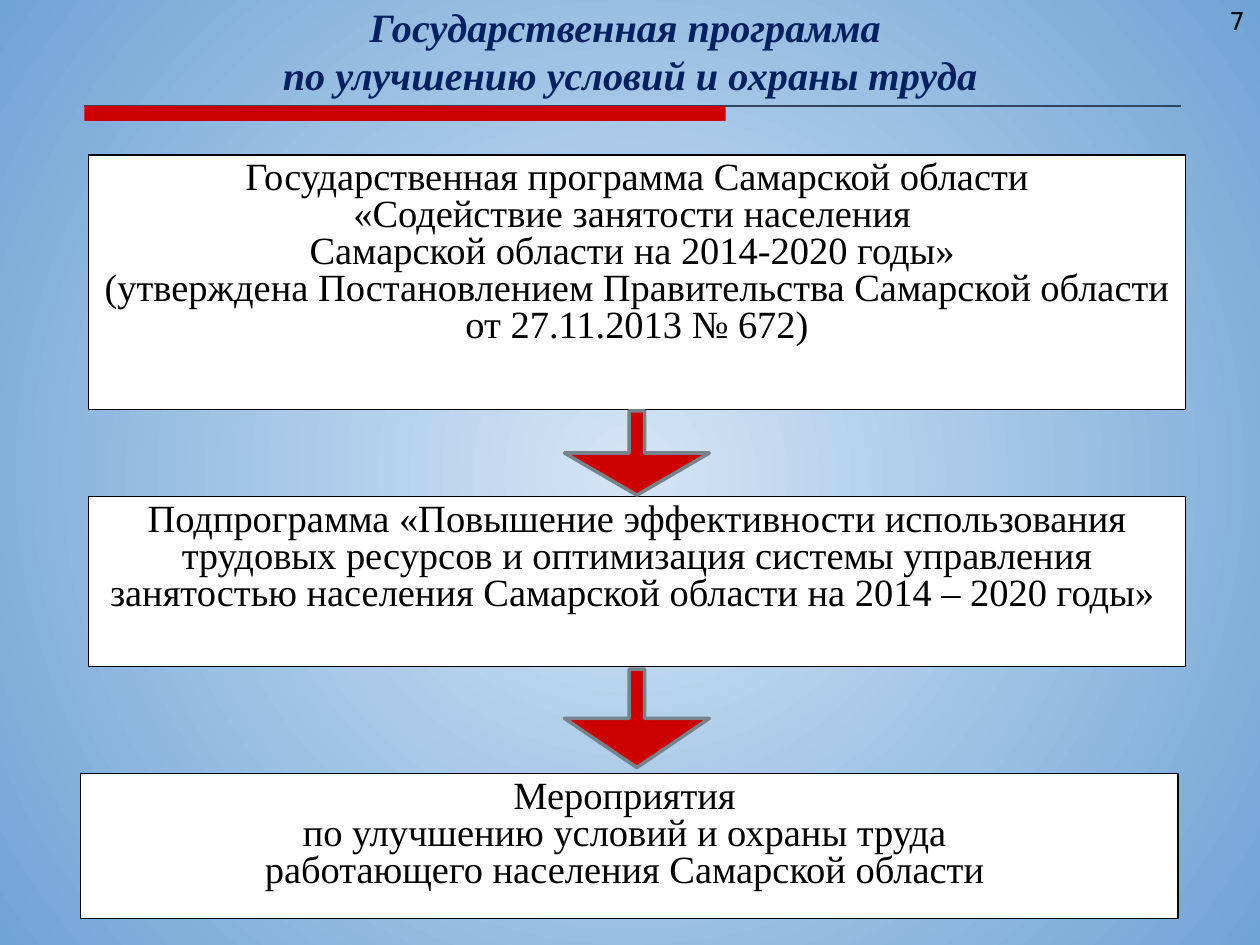
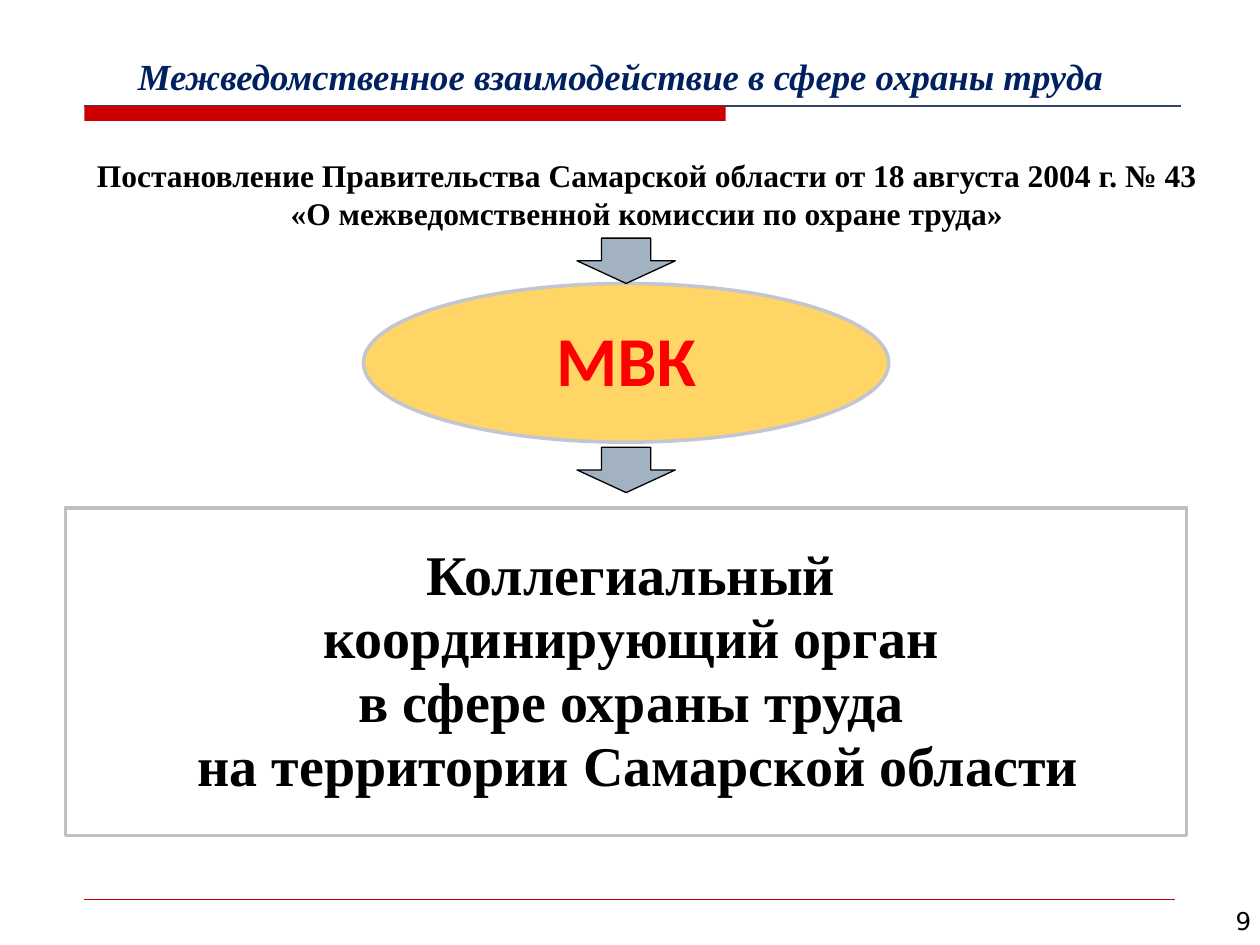
from dataclasses import dataclass
from typing import NamedTuple

from lxml.etree import SubElement
from pptx import Presentation
from pptx.dml.color import RGBColor
from pptx.enum.shapes import MSO_CONNECTOR as Connector, MSO_SHAPE as Shape
from pptx.enum.text import MSO_ANCHOR as Anchor, MSO_AUTO_SIZE as AutoSize, PP_ALIGN as Align
from pptx.oxml.ns import qn
from pptx.util import Pt


@dataclass(frozen=True)
class Theme:
    """Colours, fonts and type sizes shared by the slides."""
    red: str = "CC0000"
    navy: str = "002060"
    black: str = "000000"
    white: str = "FFFFFF"
    rule: str = "2F4560"
    glow: str = "D4E5F5"
    sky: str = "70A4D5"
    steel: str = "77828D"
    arrow: str = "A3B2C1"
    gold: str = "FFD666"
    gold_edge: str = "C3C5D1"
    grey_edge: str = "BFBFBF"
    accent: str = "FF0000"
    serif: str = "Times New Roman"
    sans: str = "Calibri"
    number_font: str = "DejaVu Sans"
    number_size: int = 14
    decree_size: int = 18
    step_size: int = 22
    body_size: int = 32
    badge_size: int = 40
    thin: float = 0.75
    thick: float = 2


THEME = Theme()


class Box(NamedTuple):
    """A rectangle in points."""
    left: float
    top: float
    width: float
    height: float

    def inner(self, dx, dy, width, height):
        """Return a box offset from this one's top left corner."""
        return Box(self.left + dx, self.top + dy, width, height)

    def centred(self, dy, width, height):
        """Return a box centred across this one."""
        return self.inner((self.width - width) / 2, dy, width, height)

    def points(self):
        """Return the four lengths as Pt."""
        return [Pt(value) for value in self]


def colour(code):
    """Turn a hex code into a colour."""
    return RGBColor.from_string(code)


def write(frame, paragraphs, size, font=THEME.serif, ink=THEME.black, bold=False,
          italic=False, align=Align.CENTER, anchor=Anchor.TOP, spacing=None):
    """Fill a text frame with paragraphs, each given as a list of lines."""
    frame.word_wrap = True
    frame.auto_size = AutoSize.NONE
    frame.vertical_anchor = anchor
    for index, lines in enumerate(paragraphs):
        para = frame.add_paragraph() if index else frame.paragraphs[0]
        for number, line in enumerate(lines):
            if number:
                para.add_line_break()
            para.add_run().text = line
        para.alignment = align
        para.line_spacing = spacing
        para.font.name = font
        para.font.size = Pt(size)
        para.font.bold = bold
        para.font.italic = italic
        para.font.color.rgb = colour(ink)


def add_figure(page, kind, box, fill, edge=None, weight=THEME.thin):
    """Add a flat preset shape."""
    figure = page.shapes.add_shape(kind, *box.points())
    figure.shadow.inherit = False
    figure.fill.solid()
    figure.fill.fore_color.rgb = colour(fill)
    if edge:
        figure.line.color.rgb = colour(edge)
        figure.line.width = Pt(weight)
    else:
        figure.line.fill.background()
    return figure


def add_arrow(page, box, shaft, fill, edge, weight):
    """Add a down arrow with the given shaft width."""
    arrow = add_figure(page, Shape.DOWN_ARROW, box, fill, edge, weight)
    arrow.adjustments[0] = shaft
    arrow.adjustments[1] = 0.5


def add_rule(page, left, top, width, ink):
    """Add a thin horizontal line."""
    rule = page.shapes.add_connector(
        Connector.STRAIGHT, Pt(left), Pt(top), Pt(left + width), Pt(top))
    rule.line.color.rgb = colour(ink)
    rule.line.width = Pt(THEME.thin)
    SubElement(rule.element.spPr, qn("a:effectLst"))


def paint_glow(page):
    """Give the page a round gradient background."""
    fill = page.background.fill
    fill.gradient()
    for stop, code in zip(fill.gradient_stops, (THEME.glow, THEME.sky)):
        stop.color.rgb = colour(code)
    gradient = page.element.find(".//" + qn("a:gradFill"))
    gradient.remove(gradient.find(qn("a:lin")))
    circle = SubElement(gradient, qn("a:path"), path="circle")
    SubElement(circle, qn("a:fillToRect"), l="50000", t="50000", r="50000", b="50000")


def draw_header(page, band, title_box, lines, size):
    """Place the title and the red band with its rule."""
    add_rule(page, band.left, band.top, band.width, THEME.rule)
    add_figure(page, Shape.RECTANGLE, band.inner(0, 0, 366.5, band.height), THEME.red)
    title = page.shapes.title
    title.left, title.top, title.width, title.height = title_box.points()
    write(title.text_frame, [lines], size, ink=THEME.navy, bold=True, italic=True,
          anchor=Anchor.BOTTOM)


def draw_number(page, box, number):
    """Write the page number."""
    label = page.shapes.add_textbox(*box.points())
    write(label.text_frame, [[number]], THEME.number_size, THEME.number_font,
          align=Align.RIGHT)


def draw_steps(page, box):
    """Draw the chain of programme steps joined by arrows."""
    steps = [
        (0, 0, 145.4, ["Государственная программа Самарской области",
                       "«Содействие занятости населения ",
                       "Самарской области на 2014-2020 годы» ",
                       "(утверждена Постановлением Правительства Самарской области "
                       "от 27.11.2013 № 672)"]),
        (0, 195.1, 97.2, ["Подпрограмма «Повышение эффективности использования "
                          "трудовых ресурсов и оптимизация системы управления "
                          "занятостью населения Самарской области на 2014 – 2020 годы» "]),
        (-4.3, 353.5, 82.8, ["Мероприятия ", "по улучшению условий и охраны труда ",
                             "работающего населения Самарской области "]),
    ]
    for dx, dy, height, lines in steps:
        step = add_figure(page, Shape.RECTANGLE, box.inner(dx, dy, box.width, height),
                          THEME.white, THEME.black)
        write(step.text_frame, [lines], THEME.step_size, spacing=0.8)
    for dy, height in ((146.2, 48.2), (293.8, 56.2)):
        add_arrow(page, box.centred(dy, 82.8, height), 0.108, THEME.red,
                  THEME.steel, THEME.thick)


def draw_commission(page, box):
    """Draw the decree, the commission badge and its role."""
    decree = page.shapes.add_textbox(*box.inner(-6.5, 0, 677.5, 56.9).points())
    write(decree.text_frame,
          [["Постановление Правительства Самарской области от 18 августа 2004 г. № 43",
            "«О межведомственной комиссии по охране труда»"]],
          THEME.decree_size, bold=True, anchor=Anchor.BOTTOM)
    badge = add_figure(page, Shape.OVAL, box.centred(82.8, 300.2, 90.7), THEME.gold,
                       THEME.gold_edge, THEME.thick)
    write(badge.text_frame, [["МВК"]], THEME.badge_size, THEME.sans, THEME.accent,
          bold=True, anchor=Anchor.MIDDLE, spacing=0.93)
    role = add_figure(page, Shape.RECTANGLE, box.inner(0, 211, box.width, 187.2),
                      THEME.white, THEME.grey_edge, THEME.thick)
    role.text_frame.margin_left = Pt(21)
    write(role.text_frame,
          [["Коллегиальный ", "координирующий орган "],
           ["в сфере охраны труда ", "на территории Самарской области"]],
          THEME.body_size, bold=True, anchor=Anchor.MIDDLE, spacing=0.95)
    for dy in (56.9, 176.4):
        add_arrow(page, box.centred(dy, 56.2, 25.9), 0.5, THEME.arrow,
                  THEME.black, THEME.thin)


def main():
    """Build and save the deck."""
    deck = Presentation()
    deck.slide_width, deck.slide_height = Pt(720), Pt(540)
    title_only = deck.slide_layouts[5]
    band = Box(48.2, 60.5, 626.4, 8.6)

    programme = deck.slides.add_slide(title_only)
    paint_glow(programme)
    draw_header(programme, band, Box(45.4, 23.8, 630, 36),
                ["Государственная программа ", "по улучшению условий и охраны труда"], 23)
    draw_number(programme, Box(562.3, 0, 156.2, 37.4), "7")
    draw_steps(programme, Box(50.4, 88.6, 627.1, 436.3))

    commission = deck.slides.add_slide(title_only)
    draw_header(commission, band, Box(14.4, 23.8, 680.4, 36),
                ["Межведомственное взаимодействие в сфере охраны труда"], 21)
    add_rule(commission, 48.2, 514.1, 623.5, THEME.red)
    draw_commission(commission, Box(37.4, 79.2, 640.8, 398.2))
    draw_number(commission, Box(565.9, 514.1, 156.2, 37.4), "9")

    deck.save("out.pptx")


if __name__ == "__main__":
    main()
